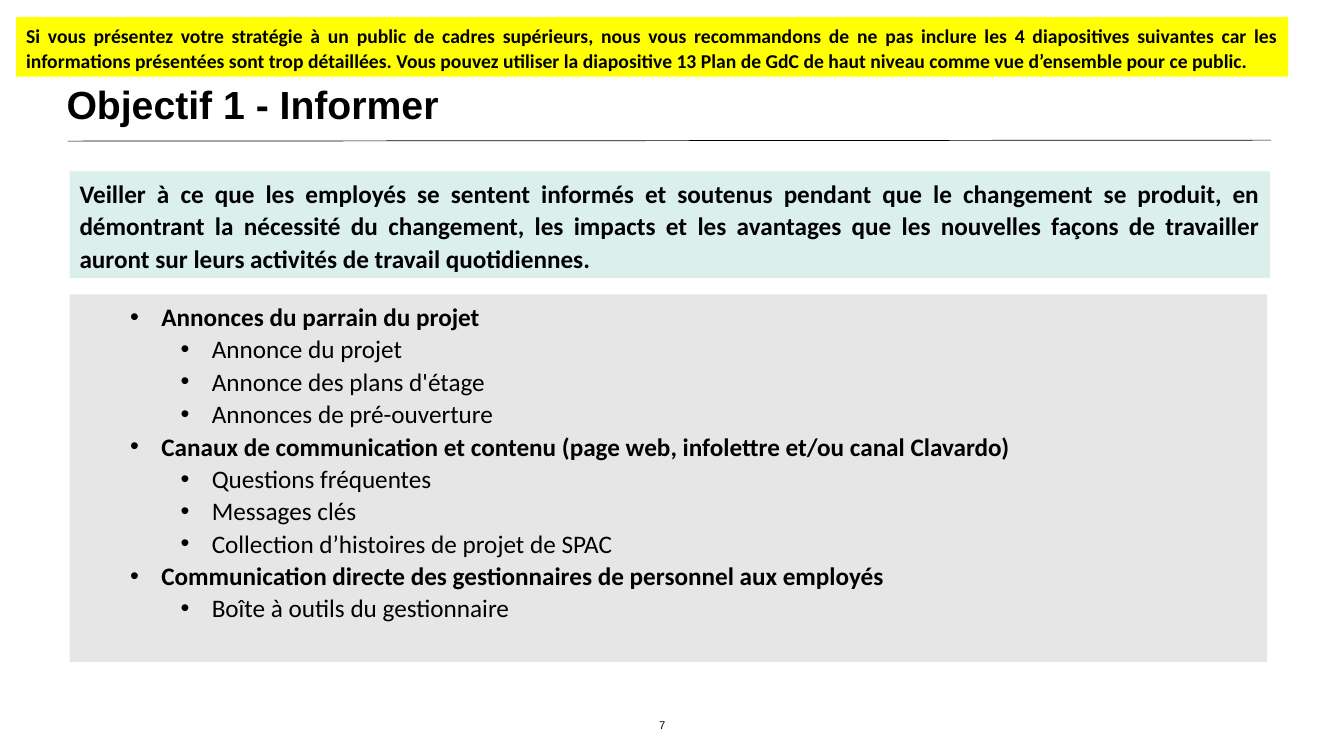
"""Build the "Objectif 1 - Informer" slide."""
from dataclasses import dataclass
from typing import Optional

from lxml import etree
from pptx import Presentation
from pptx import util as u
from pptx.dml.color import RGBColor
from pptx.enum import shapes, text
from pptx.oxml.ns import qn

WIDTH, HEIGHT = u.Inches(13.33), u.Inches(7.5)
INK = "000000"
INDENTS = {1: 0.81, 2: 1.31}
HANGING = 0.31


@dataclass(frozen=True)
class Area:
    """A rectangle in percent of the slide's width and height."""
    left: float
    top: float
    width: float
    height: float


@dataclass(frozen=True)
class Style:
    """Look of a paragraph."""
    size: int
    font: str = "Calibri"
    bold: bool = True
    align: text.PP_ALIGN = text.PP_ALIGN.JUSTIFY
    spacing: float = 1.07


@dataclass(frozen=True)
class Banner:
    """A filled box holding one paragraph."""
    area: Area
    fill: str
    style: Style
    wording: str


@dataclass(frozen=True)
class Activity:
    """A bold list heading with its detail lines."""
    heading: str
    details: tuple[str, ...]


TITLE_AREA = Area(4.2, 8, 90.3, 12.13)
LIST_AREA = Area(5.18, 38.93, 89.1, 48.67)
NUMBER_AREA = Area(47.78, 94.13, 3, 3.6)
RULE_AREA = Area(5.03, 18.67, 89.55, -0.13)

BANNERS = (
    Banner(Area(1.2, 2.27, 94.65, 7.87), "FFFF00", Style(14),
           "Si vous présentez votre stratégie à un public de cadres supérieurs, nous vous "
           "recommandons de ne pas inclure les 4 diapositives suivantes car les informations "
           "présentées sont trop détaillées. Vous pouvez utiliser la diapositive 13 Plan de GdC "
           "de haut niveau comme vue d’ensemble pour ce public."),
    Banner(Area(5.18, 22.67, 89.33, 14.13), "DBF0EC", Style(18),
           "Veiller à ce que les employés se sentent informés et soutenus pendant que le "
           "changement se produit, en démontrant la nécessité du changement, les impacts et les "
           "avantages que les nouvelles façons de travailler auront sur leurs activités de "
           "travail quotidiennes."),
)

ACTIVITIES = (
    Activity("Annonces du parrain du projet",
             ("Annonce du projet", "Annonce des plans d'étage", "Annonces de pré-ouverture")),
    Activity("Canaux de communication et contenu (page web, infolettre et/ou canal Clavardo)",
             ("Questions fréquentes", "Messages clés",
              "Collection d’histoires de projet de SPAC")),
    Activity("Communication directe des gestionnaires de personnel aux employés",
             ("Boîte à outils du gestionnaire",)),
)


def colour(value: str) -> RGBColor:
    """Turn a hex string into a colour."""
    return RGBColor.from_string(value)


def across(share: float) -> int:
    """Length for a percentage of the slide's width."""
    return round(WIDTH * share / 100)


def down(share: float) -> int:
    """Length for a percentage of the slide's height."""
    return round(HEIGHT * share / 100)


def box(area: Area) -> tuple[int, int, int, int]:
    """Left, top, width and height of an area."""
    return across(area.left), down(area.top), across(area.width), down(area.height)


def place(shape, area: Area) -> None:
    """Move a shape onto an area."""
    shape.left, shape.top, shape.width, shape.height = box(area)


def fill_solid(shape, value: str) -> None:
    """Give a shape a plain fill."""
    shape.fill.solid()
    shape.fill.fore_color.rgb = colour(value)


def prepare(frame, anchor: text.MSO_ANCHOR) -> None:
    """Wrap the text of a frame and anchor it."""
    frame.word_wrap = True
    frame.auto_size = text.MSO_AUTO_SIZE.NONE
    frame.vertical_anchor = anchor


def write(paragraph, wording: str, style: Style) -> None:
    """Format a paragraph and add its run."""
    paragraph.alignment = style.align
    paragraph.line_spacing = style.spacing
    paragraph.space_before = paragraph.space_after = u.Pt(0)
    run = paragraph.add_run()
    run.text = wording
    run.font.name, run.font.size, run.font.bold = style.font, u.Pt(style.size), style.bold
    run.font.color.rgb = colour(INK)


def add_bullet(paragraph, level: int) -> None:
    """Indent a paragraph and give it a round bullet."""
    paragraph.level = level
    properties = paragraph._p.get_or_add_pPr()
    properties.set("marL", str(u.Inches(INDENTS[level])))
    properties.set("indent", str(-u.Inches(HANGING)))
    tint = etree.SubElement(properties, qn("a:buClr"))
    etree.SubElement(tint, qn("a:srgbClr"), val=INK)
    etree.SubElement(properties, qn("a:buFont"), typeface="Arial")
    etree.SubElement(properties, qn("a:buChar"), char="•")


def add_banner(slide, banner: Banner) -> None:
    """Draw a filled box with its text."""
    shape = slide.shapes.add_shape(shapes.MSO_SHAPE.RECTANGLE, *box(banner.area))
    shape.shadow.inherit = False
    fill_solid(shape, banner.fill)
    shape.line.fill.background()
    prepare(shape.text_frame, text.MSO_ANCHOR.TOP)
    write(shape.text_frame.paragraphs[0], banner.wording, banner.style)


def add_rule(slide) -> None:
    """Draw the thin line under the title."""
    left, top, width, height = box(RULE_AREA)
    rule = slide.shapes.add_connector(shapes.MSO_CONNECTOR.STRAIGHT,
                                      left, top, left + width, top + height)
    rule.line.color.rgb = colour(INK)
    rule.line.width = u.Pt(0.5)
    etree.SubElement(rule._element.spPr, qn("a:effectLst"))


def add_number(slide, number: str) -> None:
    """Write the slide number at the foot."""
    frame = slide.shapes.add_textbox(*box(NUMBER_AREA)).text_frame
    prepare(frame, text.MSO_ANCHOR.MIDDLE)
    write(frame.paragraphs[0], number, Style(8, "Arial", False, text.PP_ALIGN.CENTER, 1.0))


def fill_title(title, wording: str) -> None:
    """Place and write the title."""
    place(title, TITLE_AREA)
    prepare(title.text_frame, text.MSO_ANCHOR.MIDDLE)
    write(title.text_frame.paragraphs[0], wording,
          Style(28, "Arial", True, text.PP_ALIGN.LEFT, 0.9))


def fill_list(body) -> None:
    """Place the body and list the activities."""
    place(body, LIST_AREA)
    fill_solid(body, "E7E6E6")
    prepare(body.text_frame, text.MSO_ANCHOR.TOP)
    lines = [line for activity in ACTIVITIES
             for line in ((1, activity.heading), *((2, item) for item in activity.details))]
    paragraph: Optional[object] = body.text_frame.paragraphs[0]
    for level, wording in lines:
        paragraph = paragraph or body.text_frame.add_paragraph()
        add_bullet(paragraph, level)
        write(paragraph, wording, Style(18, bold=level == 1))
        paragraph = None


def main() -> None:
    """Build and save the slide."""
    deck = Presentation()
    deck.slide_width, deck.slide_height = WIDTH, HEIGHT
    slide = deck.slides.add_slide(deck.slide_layouts[1])
    fill_title(slide.shapes.title, "Objectif 1 - Informer")
    fill_list(slide.placeholders[1])
    add_rule(slide)
    add_number(slide, "7")
    for banner in BANNERS:
        add_banner(slide, banner)
    deck.save("out.pptx")


if __name__ == "__main__":
    main()
